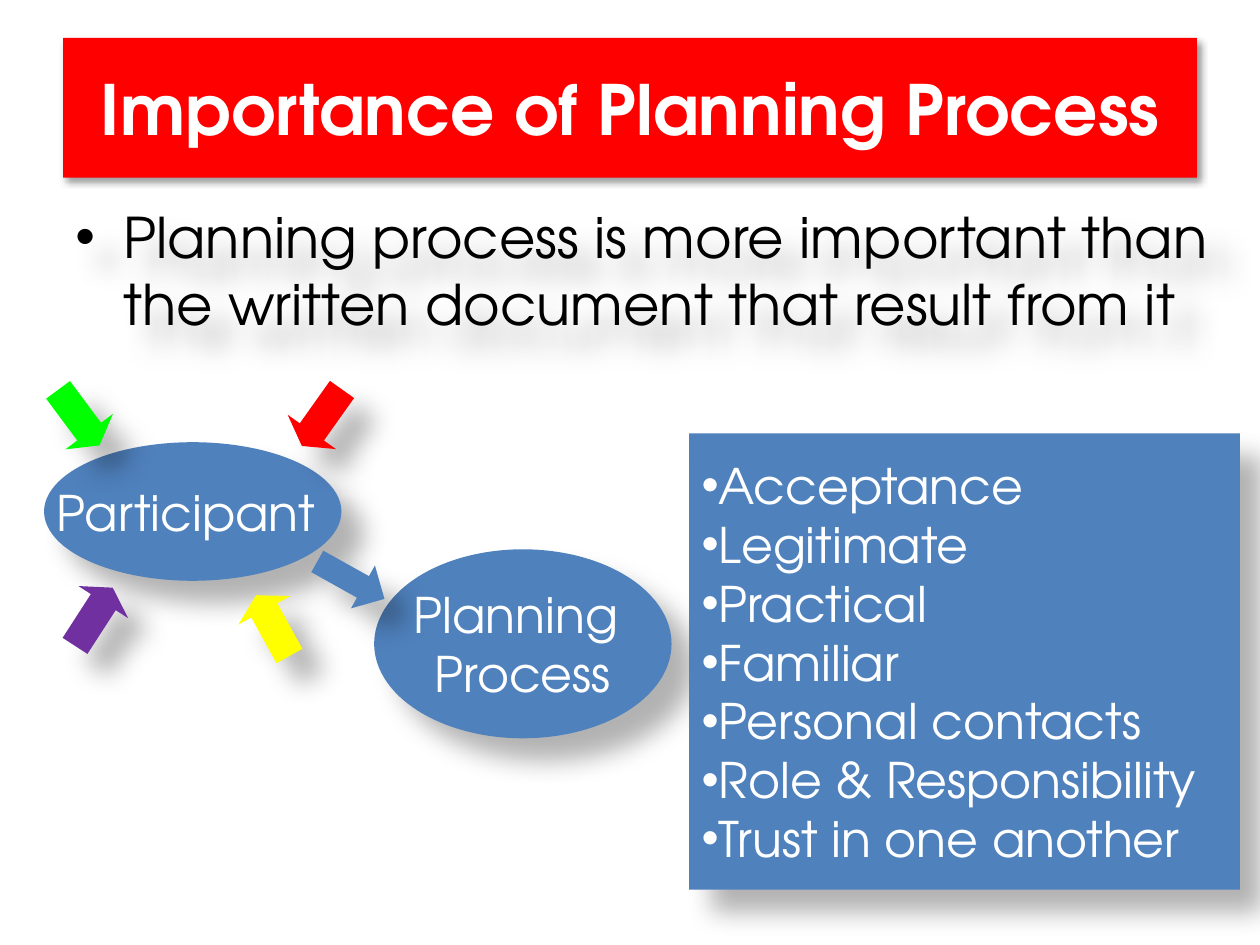
from dataclasses import dataclass

from lxml.etree import SubElement
from pptx import Presentation
from pptx.dml.color import RGBColor
from pptx.enum.shapes import MSO_SHAPE
from pptx.enum.text import MSO_ANCHOR, MSO_AUTO_SIZE, PP_ALIGN
from pptx.oxml.ns import qn
from pptx.util import Inches, Pt


@dataclass(frozen=True)
class Theme:
    font: str = "TeX Gyre Adventor"
    white: str = "FFFFFF"
    black: str = "000000"
    red: str = "FF0000"
    blue: str = "4F81BD"
    green: str = "00FF00"
    purple: str = "7030A0"
    yellow: str = "FFFF00"
    title: float = 39.6
    body: float = 32
    label: float = 28


THEME = Theme()
SOFT = (30, 15, 18)
CRISP = (40, 4, 3)


def color(code):
    return RGBColor.from_string(code)


def place(shape, box):
    shape.left, shape.top, shape.width, shape.height = map(Inches, box)


def shade(shape, look):
    alpha, blur, dist = look
    shape.shadow.inherit = False
    effects = shape._element.spPr.find(qn("a:effectLst"))
    outer = SubElement(effects, qn("a:outerShdw"), blurRad=str(Pt(blur)),
                       dist=str(Pt(dist)), dir=str(45 * 60000),
                       algn="tl", rotWithShape="0")
    tint = SubElement(outer, qn("a:srgbClr"), val=THEME.black)
    SubElement(tint, qn("a:alpha"), val=str(alpha * 1000))


def paint(shape, fill, look=SOFT):
    shape.fill.solid()
    shape.fill.fore_color.rgb = color(fill)
    shape.line.fill.background()
    shade(shape, look)


def bullet(para, indent):
    props = para._p.get_or_add_pPr()
    props.set("marL", str(Inches(indent)))
    props.set("indent", str(-Inches(indent)))
    SubElement(props, qn("a:buFont"), typeface="Arial")
    SubElement(props, qn("a:buChar"), char="•")


def write(shape, text, size=THEME.label, ink=THEME.white, bold=False,
          align=PP_ALIGN.CENTER, anchor=MSO_ANCHOR.MIDDLE, wrap=True,
          before=0, indent=None):
    frame = shape.text_frame
    frame.text = text
    frame.word_wrap = wrap
    frame.auto_size = MSO_AUTO_SIZE.NONE
    frame.vertical_anchor = anchor
    for para in frame.paragraphs:
        para.alignment = align
        para.space_before = Pt(before)
        if indent is not None:
            bullet(para, indent)
        for run in para.runs:
            font = run.font
            font.name, font.size, font.bold = THEME.font, Pt(size), bold
            font.color.rgb = color(ink)


def add_block(slide, kind, box, fill=THEME.blue):
    shape = slide.shapes.add_shape(kind, *map(Inches, box))
    paint(shape, fill)
    return shape


def add_arrow(slide, box, turn, fill, head=0.29):
    arrow = add_block(slide, MSO_SHAPE.RIGHT_ARROW, box, fill)
    arrow.adjustments[0] = 0.5
    arrow.adjustments[1] = head
    arrow.rotation = turn


def add_title(slide):
    title = slide.shapes.title
    place(title, (0.5, 0.3, 9, 1.11))
    paint(title, THEME.red, CRISP)
    write(title, "Importance of Planning Process", size=THEME.title, bold=True)


def add_point(slide):
    point = slide.shapes.add_textbox(*map(Inches, (0.5, 1.56, 9.19, 1.84)))
    shade(point, SOFT)
    write(point, "Planning process is more important than the written "
          "document that result from it", size=THEME.body, ink=THEME.black,
          align=PP_ALIGN.LEFT, anchor=MSO_ANCHOR.TOP, before=6.4, indent=0.38)


def add_flow(slide):
    process = add_block(slide, MSO_SHAPE.OVAL, (2.97, 4.36, 2.36, 1.5))
    write(process, "Planning \nProcess", wrap=False)
    people = add_block(slide, MSO_SHAPE.OVAL, (0.35, 3.51, 2.36, 1.1))
    write(people, "Participant ", wrap=False)
    add_arrow(slide, (2.48, 4.41, 0.61, 0.39), 29.2, THEME.blue, head=0.5)


def add_gains(slide):
    panel = add_block(slide, MSO_SHAPE.RECTANGLE, (5.47, 3.44, 4.37, 3.62))
    gains = ("Acceptance", "Legitimate", "Practical", "Familiar",
             "Personal contacts", "Role & Responsibility",
             "Trust in one another")
    write(panel, "\n".join(gains), align=PP_ALIGN.LEFT, indent=0)


def add_inputs(slide):
    for left, top, turn, fill in (
        (0.47, 4.66, 302.9, THEME.purple),
        (0.35, 3.08, 53.3, THEME.green),
        (1.89, 4.73, 241.2, THEME.yellow),
        (2.28, 3.08, 125.4, THEME.red),
    ):
        add_arrow(slide, (left, top, 0.55, 0.47), turn, fill)


def main():
    deck = Presentation()
    deck.slide_width, deck.slide_height = Inches(10), Inches(7.5)
    slide = deck.slides.add_slide(deck.slide_layouts[5])
    add_title(slide)
    add_point(slide)
    add_flow(slide)
    add_gains(slide)
    add_inputs(slide)
    deck.save("out.pptx")


if __name__ == "__main__":
    main()
